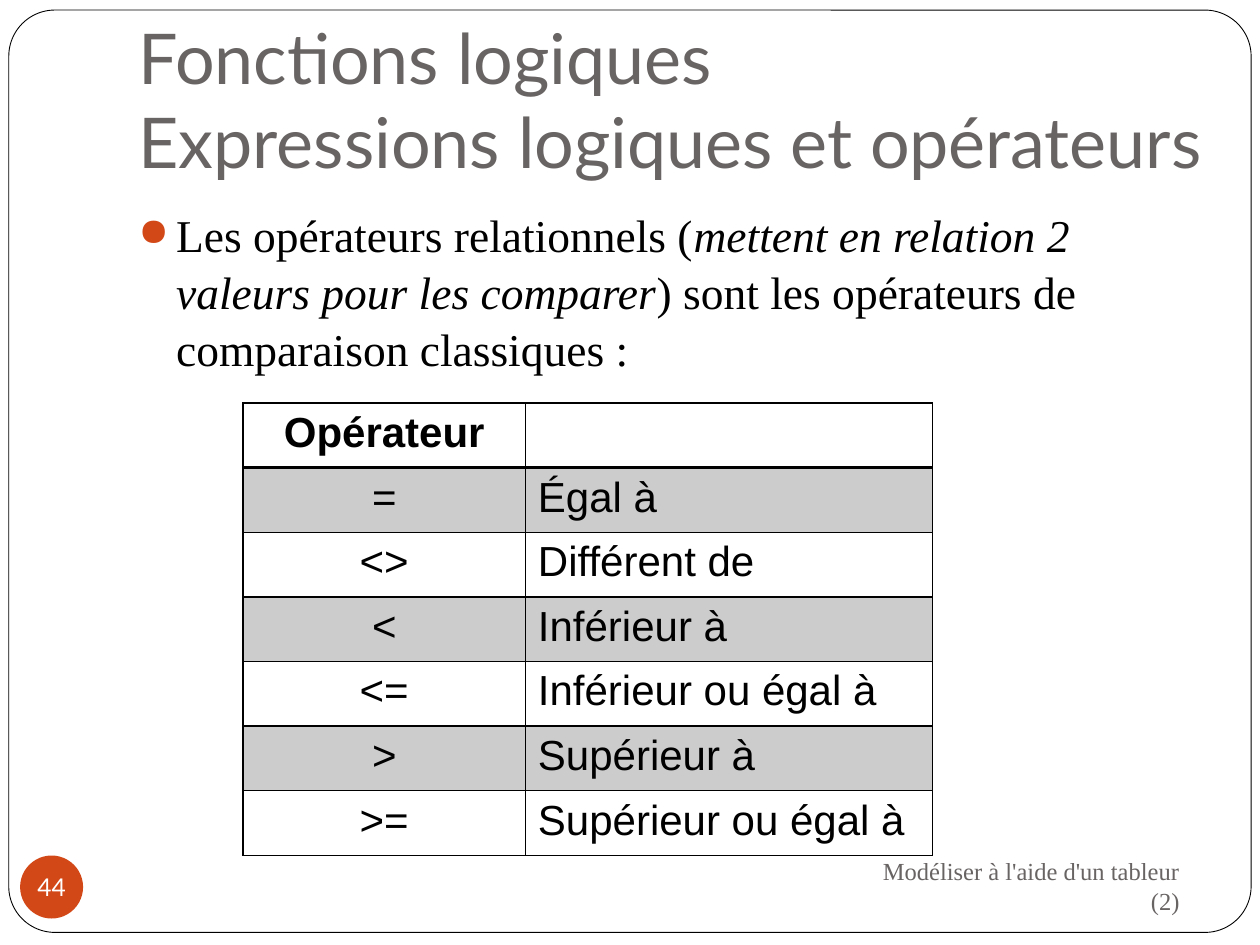
import pptx
import pptx.util
import pptx.dml.color
import pptx.enum.shapes
import pptx.enum.text
import pptx.oxml
import pptx.oxml.ns
import lxml.etree

Inches, Pt = pptx.util.Inches, pptx.util.Pt
ALIGN = pptx.enum.text.PP_ALIGN
ANCHOR = pptx.enum.text.MSO_ANCHOR
SHAPE = pptx.enum.shapes.MSO_SHAPE
qn = pptx.oxml.ns.qn

OPERATORS = [
    ("Opérateur", ""),
    ("=", "Égal à"),
    ("<>", "Différent de"),
    ("<", "Inférieur à"),
    ("<=", "Inférieur ou égal à"),
    (">", "Supérieur à"),
    (">=", "Supérieur ou égal à"),
]


def rgb(value):
    return pptx.dml.color.RGBColor.from_string(value)


def add_xml(parent, tag, **attrs):
    return lxml.etree.SubElement(parent, qn(tag), attrs)


class Deck:
    heading, serif, sans = "Lato", "Times New Roman", "Arial"
    black, white, grey, accent = "000000", "FFFFFF", "696464", "D34817"

    def __init__(self):
        self.prs = pptx.Presentation()
        self.prs.slide_width, self.prs.slide_height = Inches(10), Inches(7.5)
        self.s = self.prs.slides.add_slide(self.prs.slide_layouts[5])

    def style(self, p, name, size, color, align=ALIGN.LEFT, bold=False):
        p.alignment = align
        p.font.name, p.font.size, p.font.bold = name, Pt(size), bold
        p.font.color.rgb = rgb(color)

    def shape(self, kind, box, fill, line=None):
        sp = self.s.shapes.add_shape(kind, *map(Inches, box))
        sp.shadow.inherit = False
        sp.fill.solid()
        sp.fill.fore_color.rgb = rgb(fill)
        if line:
            sp.line.color.rgb = rgb(line)
            sp.line.width = Pt(0.5)
        else:
            sp.line.fill.background()
        return sp

    def frame(self, box):
        sp = self.shape(SHAPE.ROUNDED_RECTANGLE, box, self.white, self.black)
        sp.adjustments[0] = 0.05

    def title(self, text, box):
        sp = self.s.shapes.title
        sp.left, sp.top, sp.width, sp.height = map(Inches, box)
        self.s.shapes._spTree.append(sp._element)
        tf = sp.text_frame
        tf.word_wrap = True
        tf.vertical_anchor = ANCHOR.BOTTOM
        tf.margin_bottom = Inches(0.1)
        p = tf.paragraphs[0]
        p.text = text
        self.style(p, self.heading, 40, self.grey)

    def textbox(self, box):
        tf = self.s.shapes.add_textbox(*map(Inches, box)).text_frame
        tf.word_wrap = True
        return tf

    def bullet(self, runs, box):
        p = self.textbox(box).paragraphs[0]
        self.style(p, self.serif, 26, self.black)
        p.space_before = Pt(5.8)
        p.line_spacing = 1.04
        for text, italic in runs:
            r = p.add_run()
            r.text = text
            r.font.italic = italic
        pPr = p._p.get_or_add_pPr()
        pPr.set("marL", str(Inches(0.3)))
        pPr.set("indent", str(-Inches(0.3)))
        marks = [pptx.oxml.parse_xml(f'<a:{x} xmlns:a="{pptx.oxml.ns.nsdecls("a").split(chr(34))[1]}"/>')
                 for x in ("buClr", "buSzPct", "buChar")]
        add_xml(marks[0], "a:srgbClr", val=self.accent)
        marks[1].set("val", "85000")
        marks[2].set("char", "●")
        defaults = pPr.find(qn("a:defRPr"))
        for mark in marks:
            defaults.addprevious(mark)

    def footer(self, text, box):
        tf = self.textbox(box)
        tf.vertical_anchor = ANCHOR.MIDDLE
        p = tf.paragraphs[0]
        p.text = text
        self.style(p, self.serif, 14, self.grey, ALIGN.RIGHT)

    def badge(self, text, box):
        tf = self.shape(SHAPE.OVAL, box, self.accent).text_frame
        tf.margin_left = tf.margin_right = tf.margin_top = tf.margin_bottom = 0
        tf.word_wrap = False
        tf.vertical_anchor = ANCHOR.MIDDLE
        p = tf.paragraphs[0]
        p.text = text
        self.style(p, self.heading, 14, self.white, ALIGN.CENTER)

    def cell_format(self, cell, row):
        tcPr = cell._tc.get_or_add_tcPr()
        widths = {"L": 1, "R": 1, "T": 2 if row == 1 else 1, "B": 2 if row == 0 else 1}
        for side, width in widths.items():
            ln = add_xml(tcPr, f"a:ln{side}", w=str(Pt(width)))
            add_xml(add_xml(ln, "a:solidFill"), "a:srgbClr", val=self.black)
        if row % 2:
            cell.fill.solid()
            cell.fill.fore_color.rgb = rgb(self.black)
            add_xml(tcPr.find(qn("a:solidFill"))[0], "a:alpha", val="20000")
        else:
            cell.fill.background()

    def table(self, rows, box, widths):
        tbl = self.s.shapes.add_table(len(rows), len(widths), *map(Inches, box)).table
        tbl.first_row = tbl.horz_banding = False
        for col, width in zip(tbl.columns, widths):
            col.width = Inches(width)
        for i, row in enumerate(rows):
            for j, text in enumerate(row):
                cell = tbl.cell(i, j)
                p = cell.text_frame.paragraphs[0]
                p.text = text
                align = ALIGN.LEFT if j else ALIGN.CENTER
                self.style(p, self.sans, 24, self.black, align, i == 0)
                self.cell_format(cell, i)


def main():
    deck = Deck()
    deck.frame((0.07, 0.08, 9.86, 7.32))
    deck.title("Fonctions logiques\vExpressions logiques et opérateurs", (1, 0.3, 9.12, 1.25))
    deck.bullet([
        ("Les opérateurs relationnels (", False),
        ("mettent en relation 2 valeurs pour les comparer", True),
        (") sont les opérateurs de comparaison classiques :", False),
    ], (1, 1.58, 8.5, 5))
    deck.footer("Modéliser à l'aide d'un tableur (2)", (6.75, 6.77, 2.71, 0.52))
    deck.badge("44", (0.16, 6.79, 0.5, 0.5))
    deck.table(OPERATORS, (1.93, 3.2, 5.47, 3.59), (2.24, 3.23))
    deck.prs.save("out.pptx")


if __name__ == "__main__":
    main()
